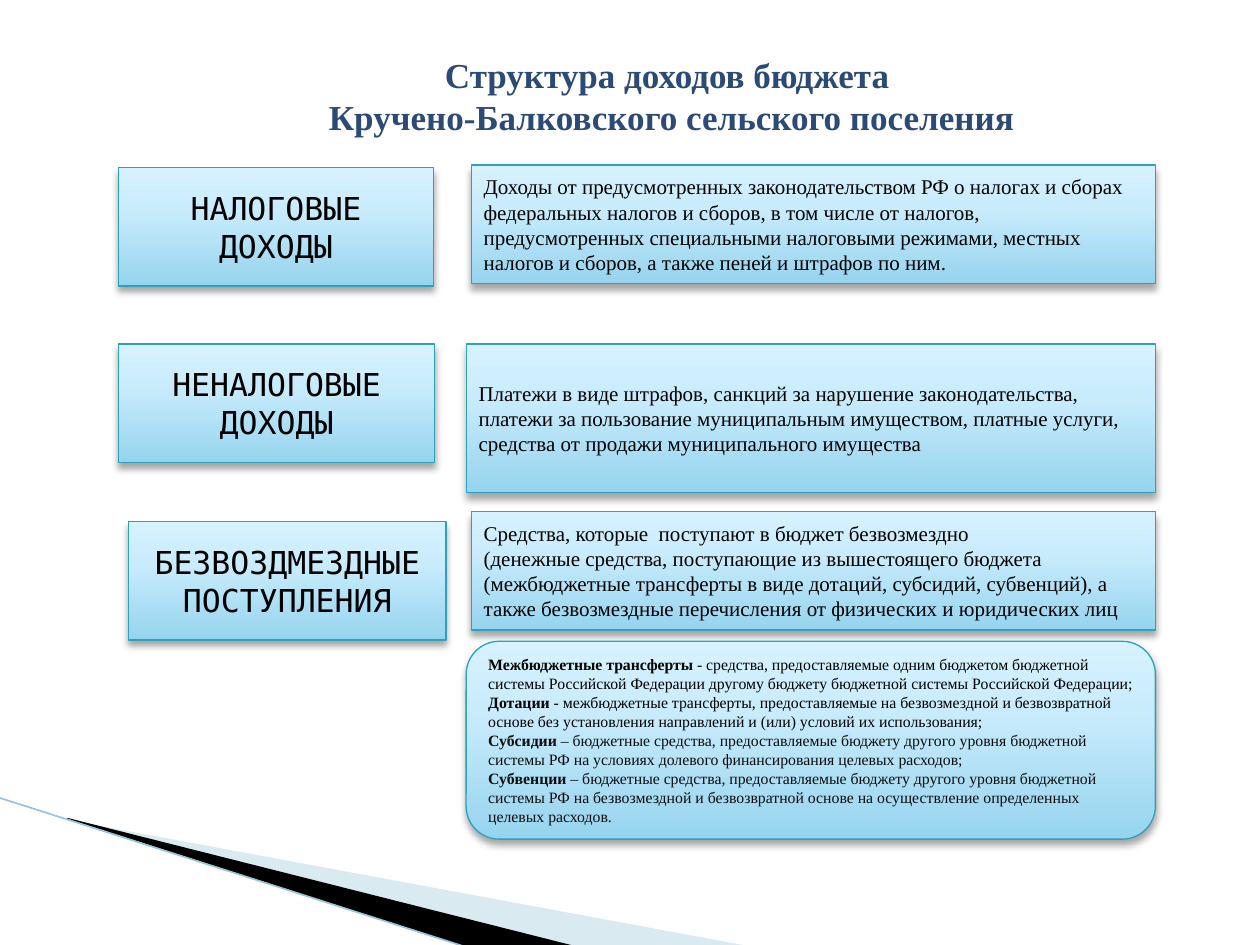
from lxml import etree
from pptx import Presentation
from pptx import util as u
from pptx.dml.color import RGBColor
from pptx.enum import shapes, text
from pptx.oxml import parse_xml
from pptx.oxml.ns import nsdecls, qn

SERIF, MONO = "Times New Roman", "DejaVu Sans Mono"
GRADIENT = [(0, "96D4EE"), (65, "C9ECFC"), (100, "D7F2FF")]


def rgb(value):
    return RGBColor.from_string(value)


def add_panel(preset, box, paragraphs, font, size, align):
    """Glossy blue panel; each paragraph is a list of (text, bold, colour)."""
    panel = slide.shapes.add_shape(preset, *map(u.Inches, box))
    panel.line.color.rgb = rgb("2DA2BF")
    panel.line.width = u.Pt(0.75)
    stops = "".join(f'<a:gs pos="{pos * 1000}"><a:srgbClr val="{color}"/></a:gs>'
                    for pos, color in GRADIENT)
    panel.line._ln.addprevious(parse_xml(
        f'<a:gradFill {nsdecls("a")} rotWithShape="1"><a:gsLst>{stops}</a:gsLst>'
        '<a:lin ang="16200000" scaled="0"/></a:gradFill>'))
    panel.line._ln.addnext(parse_xml(
        f'<a:effectLst {nsdecls("a")}><a:outerShdw blurRad="{u.Pt(4)}" dist="{u.Pt(3)}" '
        'dir="5400000" rotWithShape="0"><a:srgbClr val="000000"><a:alpha val="35000"/>'
        '</a:srgbClr></a:outerShdw></a:effectLst>'))
    frame = panel.text_frame
    frame.word_wrap = True
    frame.vertical_anchor = text.MSO_ANCHOR.MIDDLE
    for index, parts in enumerate(paragraphs):
        paragraph = frame.add_paragraph() if index else frame.paragraphs[0]
        paragraph.alignment = align
        for words, bold, color in parts:
            paragraph.add_line_break() if words == "\v" else None
            if words == "\v":
                continue
            run = paragraph.add_run()
            run.text = words
            run.font.name, run.font.size, run.font.bold = font, u.Pt(size), bold
            run.font.color.rgb = rgb(color)


prs = Presentation()
prs.slide_width, prs.slide_height = u.Inches(10), u.Inches(7.5)
slide = prs.slides.add_slide(prs.slide_layouts[6])

# Corner wedges and the thin edge line
wedges = [
    ([(0.55, 6.51), (5.95, 7.51), (4.56, 7.51), (0.55, 6.5)], "A0CBDC", 40),
    ([(0.53, 6.49), (4.57, 7.51), (3.72, 7.52), (0.54, 6.5)], "000000", 100),
]
for points, color, opacity in wedges:
    corners = [(u.Inches(x), u.Inches(y)) for x, y in points]
    builder = slide.shapes.build_freeform(*corners[0])
    builder.add_line_segments(corners[1:], close=True)
    wedge = builder.convert_to_shape()
    wedge.shadow.inherit = False
    wedge.line.fill.background()
    wedge.fill.solid()
    wedge.fill.fore_color.rgb = rgb(color)
    if opacity < 100:
        tint = wedge._element.spPr.find(".//" + qn("a:srgbClr"))
        etree.SubElement(tint, qn("a:alpha")).set("val", str(opacity * 1000))

edge = slide.shapes.add_connector(shapes.MSO_CONNECTOR.STRAIGHT, u.Inches(-0.01),
                                  u.Inches(6.33), u.Inches(3.71), u.Inches(7.52))
edge.line.color.rgb = rgb("97C5D8")
edge.line.width = u.Pt(0.95)
etree.SubElement(edge._element.spPr, qn("a:effectLst"))

# Title
title = slide.shapes.add_textbox(*map(u.Inches, (1.25, 0.29, 8.16, 0.94)))
title.text_frame.word_wrap = True
title.text_frame.vertical_anchor = text.MSO_ANCHOR.MIDDLE
heading = title.text_frame.paragraphs[0]
heading.text = "Структура доходов бюджета \vКручено-Балковского сельского поселения"
heading.alignment = text.PP_ALIGN.CENTER
for run in heading.runs:
    run.font.name, run.font.size, run.font.bold = SERIF, u.Pt(20), True
    run.font.color.rgb = rgb("2B4A76")

# Income kinds on the left, their explanations on the right
incomes = [
    ("НАЛОГОВЫЕ ДОХОДЫ", (0.94, 1.33, 2.5, 0.94), (3.74, 1.31, 5.43, 0.94),
     ["Доходы от предусмотренных законодательством РФ о налогах и сборах федеральных "
      "налогов и сборов, в том числе от налогов, предусмотренных специальными налоговыми "
      "режимами, местных налогов и сборов, а также пеней и штрафов по ним."]),
    ("НЕНАЛОГОВЫЕ ДОХОДЫ", (0.94, 2.73, 2.51, 0.94), (3.7, 2.73, 5.47, 1.18),
     ["Платежи в виде штрафов, санкций за нарушение законодательства, платежи за "
      "пользование муниципальным имуществом, платные услуги, средства от продажи "
      "муниципального имущества"]),
    ("БЕЗВОЗДМЕЗДНЫЕ ПОСТУПЛЕНИЯ", (1.02, 4.14, 2.52, 0.94), (3.74, 4.06, 5.43, 0.94),
     ["Средства, которые  поступают в бюджет безвозмездно ", "\v",
      "(денежные средства, поступающие из вышестоящего бюджета (межбюджетные трансферты "
      "в виде дотаций, субсидий, субвенций), а также безвозмездные перечисления от "
      "физических и юридических лиц"]),
]
rectangle = shapes.MSO_SHAPE.RECTANGLE
for kind, kind_box, meaning_box, meaning in incomes:
    add_panel(rectangle, kind_box, [[(kind, False, "000000")]], MONO, 18,
              text.PP_ALIGN.CENTER)
    add_panel(rectangle, meaning_box, [[(part, False, "000000") for part in meaning]],
              SERIF, 12, text.PP_ALIGN.LEFT)

# Glossary of transfers
terms = [
    ("Межбюджетные трансферты ", "- средства, предоставляемые одним бюджетом бюджетной "
     "системы Российской Федерации другому бюджету бюджетной системы Российской "
     "Федерации;", "000000"),
    ("Дотации", " - межбюджетные трансферты, предоставляемые на безвозмездной и "
     "безвозвратной основе без установления направлений и (или) условий их "
     "использования;", "000000"),
    ("Субсидии ", "– бюджетные средства, предоставляемые бюджету другого уровня бюджетной "
     "системы РФ на условиях долевого финансирования целевых расходов;", "0D0D0D"),
    ("Субвенции", " – бюджетные средства, предоставляемые бюджету другого уровня бюджетной "
     "системы РФ на безвозмездной и безвозвратной основе на осуществление определенных "
     "целевых расходов.", "0D0D0D"),
]
add_panel(shapes.MSO_SHAPE.ROUNDED_RECTANGLE, (3.7, 5.09, 5.47, 1.57),
          [[(term, True, color), (definition, False, color)]
           for term, definition, color in terms], SERIF, 9, text.PP_ALIGN.LEFT)

prs.save("out.pptx")
